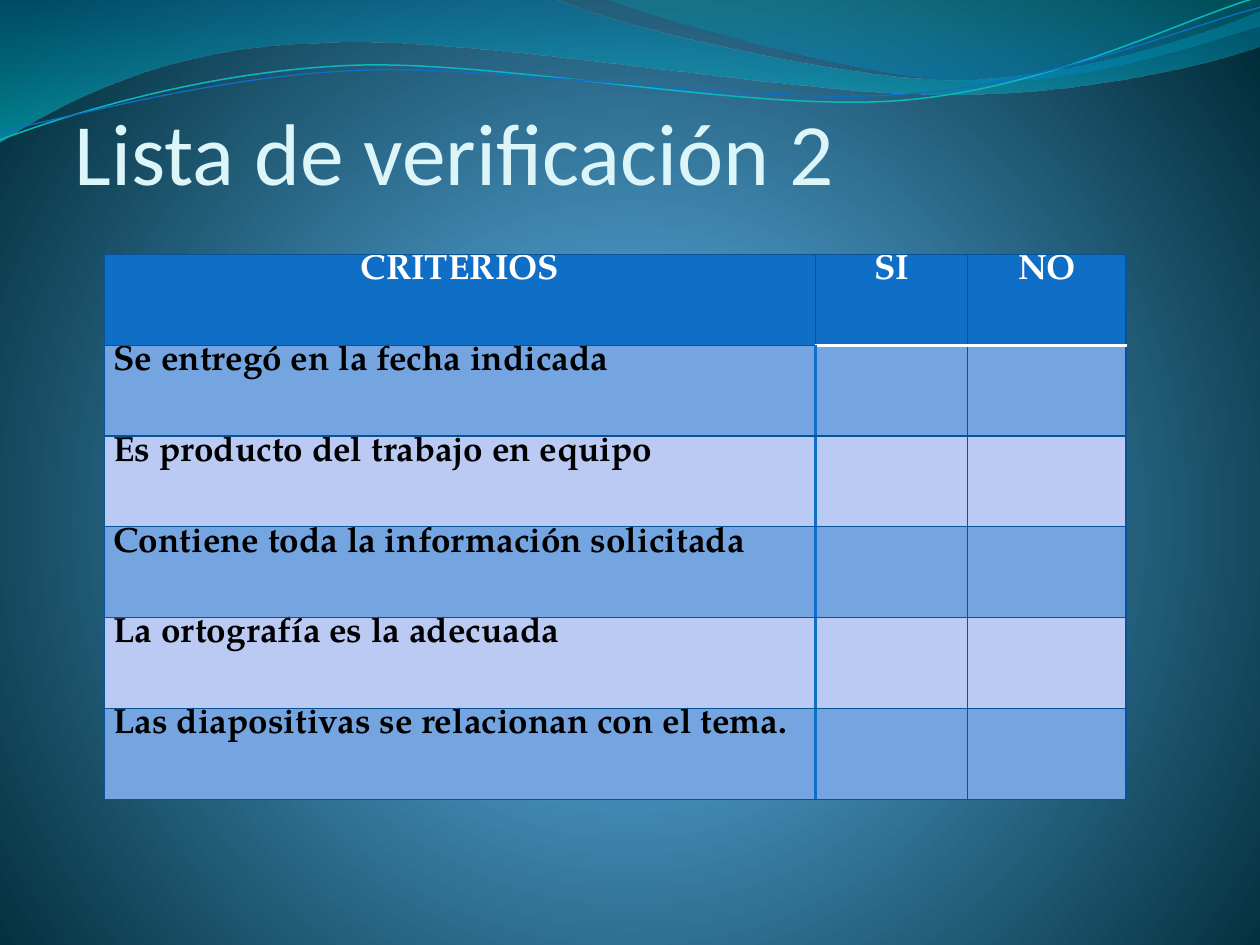
from lxml import etree
from pptx import Presentation
from pptx import util as u
from pptx.dml.color import RGBColor
from pptx.enum import text
from pptx.oxml import ns

BLUE, NAVY, WHITE = "0F6FC6", "095295", "FFFFFF"
BANDS = ["75A5E0", "BBCAF3"]
HEADS = ["CRITERIOS", "SI", "NO"]
ITEMS = [
    "Se entregó en la fecha indicada",
    "Es producto del trabajo en equipo",
    "Contiene toda la información solicitada",
    "La ortografía es la adecuada",
    "Las diapositivas se relacionan con el tema.",
]
DOWN = '<a:lin ang="5400000" scaled="0"/>'
GLOW = ('<a:path path="circle"><a:fillToRect l="10000" t="110000" '
        'r="10000" b="100000"/></a:path>')

# Outlines in cm: two numbers draw a line, six a Bézier curve.
WAVE = [(0, 0), (11.18, -0.03),
        (12.09, 0.43, 16.87, 1.6, 19.25, 1.6),
        (21.67, 1.6, 24.33, 0.66, 25.4, 0.23), (25.43, 0.91),
        (24.97, 1.12, 22.1, 1.93, 18.95, 1.9),
        (15.8, 1.9, 9.7, 0.71, 6.53, 0.86),
        (3.28, 0.91, 1.17, 2.11, -0.03, 2.87)]
CREST = [(12.17, -0.03),
         (12.93, 0.28, 17.32, 1.57, 19.53, 1.65),
         (21.74, 1.75, 24.41, 0.81, 25.4, 0.53), (25.4, 0)]
TEAL = [(0, 2.82),
        (1.22, 2.36, 4.01, 1.45, 7.04, 1.32),
        (10.03, 1.19, 15.06, 2.26, 18.11, 2.03),
        (21.16, 1.8, 23.83, 0.38, 25.35, -0.05)]
THIN = [(0, 2.64),
        (1.19, 2.44, 4.17, 1.55, 7.19, 1.42),
        (10.24, 1.3, 15.16, 2.13, 18.21, 1.9),
        (21.23, 1.7, 23.9, 0.53, 25.4, 0.15)]


def rgb(code):
    return RGBColor.from_string(code)


def bend(shape, parts):
    """Join each three lines that stand for a curve into one Bézier."""
    lines = iter(shape.element.findall(".//" + ns.qn("a:lnTo")))
    for part in parts[1:]:
        first = next(lines)
        if len(part) == 6:
            curve = etree.Element(ns.qn("a:cubicBezTo"))
            first.addprevious(curve)
            for line in (first, next(lines), next(lines)):
                curve.append(line[0])
                line.getparent().remove(line)


def blend(owner, stops, shade):
    """Swap the first solid fill for a gradient of (place, colour, opacity)."""
    marks = "".join(
        f'<a:gs pos="{pos * 1000}"><a:srgbClr val="{code}">'
        f'<a:alpha val="{alpha * 1000}"/></a:srgbClr></a:gs>'
        for pos, code, alpha in stops)
    grad = etree.fromstring(f'<a:gradFill {ns.nsdecls("a")} rotWithShape="1">'
                            f'<a:gsLst>{marks}</a:gsLst>{shade}</a:gradFill>')
    old = owner.find(".//" + ns.qn("a:solidFill"))
    old.getparent().replace(old, grad)


def edge(cell, side, code, width):
    line = etree.SubElement(cell._tc.get_or_add_tcPr(), ns.qn("a:ln" + side),
                            w=str(u.Pt(width)))
    fill = etree.SubElement(line, ns.qn("a:solidFill"))
    etree.SubElement(fill, ns.qn("a:srgbClr"), val=code)


class Page:
    """The current slide and its fonts."""
    head = "Calibri"
    body = "TeX Gyre Pagella"

    def __init__(self, deck):
        self.slide = deck.slides.add_slide(deck.slide_layouts[5])

    def back(self, stops):
        self.slide.background.fill.solid()
        blend(self.slide.element, stops, GLOW)

    def font(self, para, name, size, code, bold=False):
        for run in para.runs:
            font = run.font
            font.name, font.size, font.bold = name, u.Pt(size), bold
            font.color.rgb = rgb(code)

    def shape(self, parts, close):
        points = [(u.Cm(part[i]), u.Cm(part[i + 1]))
                  for part in parts for i in range(0, len(part), 2)]
        pen = self.slide.shapes.build_freeform(*points[0])
        pen.add_line_segments(points[1:], close=close)
        shape = pen.convert_to_shape()
        shape.shadow.inherit = False
        bend(shape, parts)
        return shape

    def wave(self, parts, stops):
        shape = self.shape(parts, True)
        shape.line.fill.background()
        shape.fill.solid()
        blend(shape.element, stops, DOWN)

    def curve(self, parts, code, width):
        shape = self.shape(parts, False)
        shape.fill.background()
        shape.line.color.rgb = rgb(code)
        shape.line.width = u.Pt(width)

    def title(self, words):
        box = self.slide.shapes.title
        box.element.getparent().append(box.element)  # in front of the waves
        box.left, box.top = u.Cm(1.5), u.Cm(0.91)
        box.width, box.height = u.Cm(22.86), u.Cm(3.18)
        frame = box.text_frame
        frame.text = words
        frame.vertical_anchor = text.MSO_ANCHOR.BOTTOM
        frame.margin_left = frame.margin_right = frame.margin_bottom = 0
        frame.paragraphs[0].alignment = text.PP_ALIGN.LEFT
        self.font(frame.paragraphs[0], self.head, 50, "DBF5F9")

    def table(self, rows, widths, height):
        grid = self.slide.shapes.add_table(
            len(rows), len(widths), u.Cm(2.11), u.Cm(5.13),
            u.Cm(sum(widths)), u.Cm(height * len(rows))).table
        for col, width in zip(grid.columns, widths):
            col.width = u.Cm(width)
        for r, row in enumerate(rows):
            grid.rows[r].height = u.Cm(height)
            for c, words in enumerate(row):
                self.cell(grid.cell(r, c), r, c, words)

    def cell(self, cell, r, c, words):
        cell.margin_left = cell.margin_right = u.Cm(0.18)
        cell.margin_top = cell.margin_bottom = 0
        thin, thick, rule = (NAVY, 0.75), (BLUE, 2), (WHITE, 2)
        edge(cell, "L", *(thick if r and c == 1 else thin))
        edge(cell, "R", *(thick if r and c == 0 else thin))
        edge(cell, "T", *(rule if r == 1 and c else thin))
        edge(cell, "B", *(rule if r == 0 and c else thin))
        cell.fill.solid()
        cell.fill.fore_color.rgb = rgb(BANDS[(r - 1) % 2] if r else BLUE)
        if words:
            cell.text_frame.text = words
            para = cell.text_frame.paragraphs[0]
            para.alignment = text.PP_ALIGN.LEFT if r else text.PP_ALIGN.CENTER
            self.font(para, self.body, 20, "000000" if r else WHITE, True)


def main():
    deck = Presentation()
    deck.slide_width, deck.slide_height = u.Cm(25.4), u.Cm(19.05)
    page = Page(deck)
    page.back([(0, "4AA0D6", 100), (25, "4C98C7", 100), (100, "002C38", 100)])
    page.wave(WAVE, [(0, "0074A1", 45), (100, "00C6CF", 55)])
    page.wave(CREST, [(0, "00A1A9", 30), (80, "008BBF", 45)])
    page.curve(TEAL, "0AB8BF", 0.85)
    page.curve(THIN, BLUE, 0.75)
    page.title("Lista de verificación 2")
    page.table([HEADS] + [[item, "", ""] for item in ITEMS],
               [14.33, 3.07, 3.19], 1.83)
    deck.save("out.pptx")


if __name__ == "__main__":
    main()
